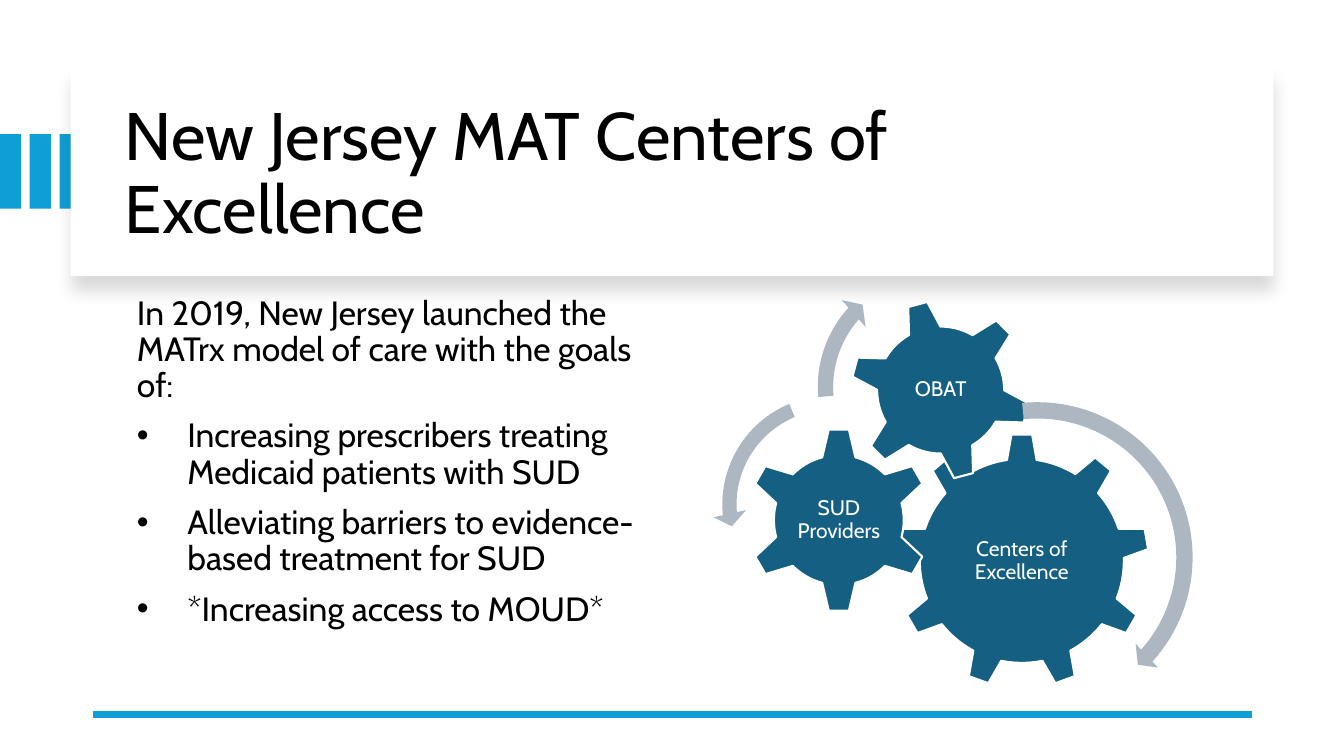
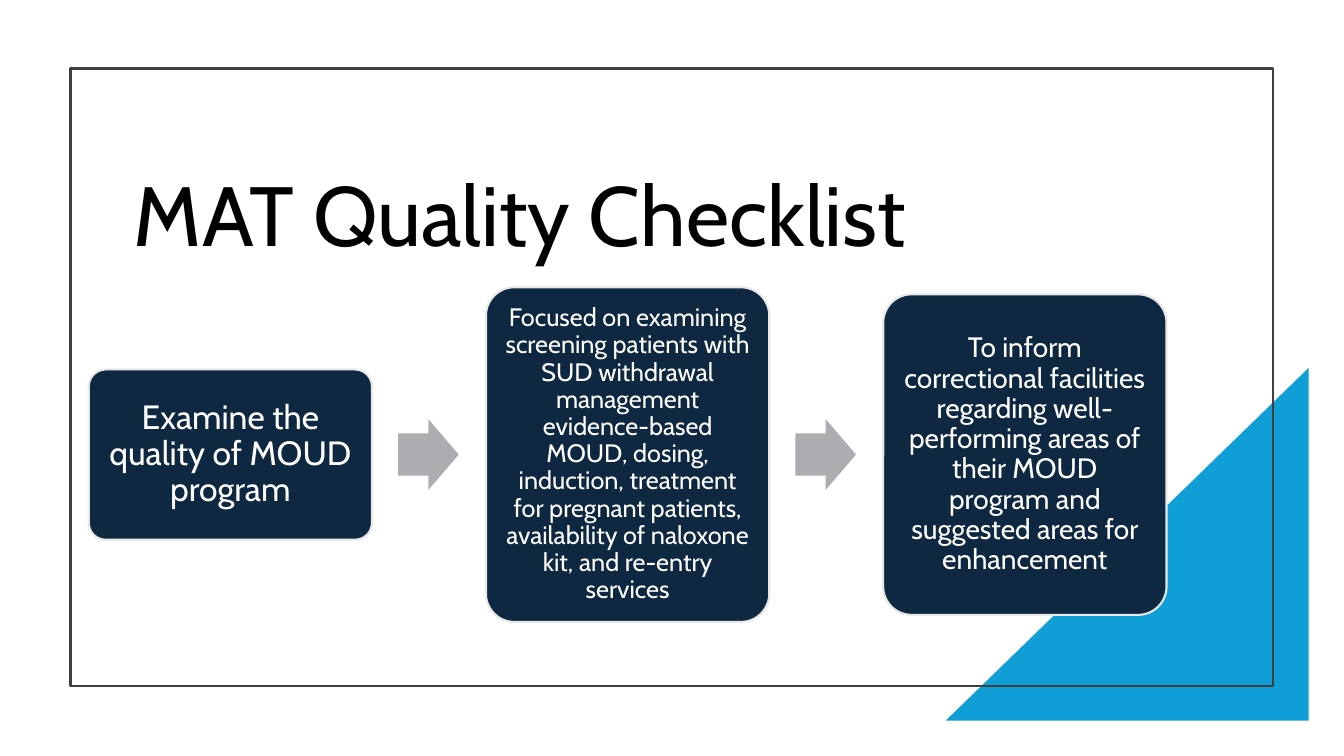
"""Build two slides on the New Jersey MAT programme: care model and checklist."""
from dataclasses import dataclass

from lxml.etree import SubElement
from pptx import Presentation
from pptx.dml.color import RGBColor
from pptx.enum.shapes import MSO_CONNECTOR, MSO_SHAPE
from pptx.enum.text import MSO_ANCHOR, PP_ALIGN
from pptx.oxml.ns import qn
from pptx.util import Inches, Pt

FONT = "Cabin"
COLORS = {
    "black": "000000",
    "white": "FFFFFF",
    "accent": "0F9ED5",
    "frame": "404040",
    "gear": "156082",
    "swirl": "ACB7C1",
    "step": "0E2841",
    "step_edge": "E8E8E8",
    "step_arrow": "ABADB0",
}


@dataclass(frozen=True)
class Box:
    left: float
    top: float
    width: float
    height: float

    def emu(self):
        return tuple(Inches(v) for v in (self.left, self.top, self.width, self.height))


@dataclass(frozen=True)
class Gear:
    kind: MSO_SHAPE
    box: Box
    label: str
    label_width: float
    rotation: float = 0


@dataclass(frozen=True)
class Swirl:
    kind: MSO_SHAPE
    box: Box
    adjustments: tuple


@dataclass(frozen=True)
class Step:
    text: str
    height: float
    size: int
    inset: float


GEARS = (
    Gear(MSO_SHAPE.GEAR_9, Box(8.87, 4.3, 2.53, 2.53), "Centers of Excellence", 1.51),
    Gear(MSO_SHAPE.GEAR_6, Box(7.4, 4.24, 1.84, 1.84), "SUD Providers", 0.91),
    Gear(MSO_SHAPE.GEAR_6, Box(8.43, 2.97, 1.8, 1.8), "OBAT", 1.01, 345),
)
SWIRLS = (
    Swirl(MSO_SHAPE.CIRCULAR_ARROW, Box(8.67, 3.91, 3.24, 3.24),
          (0.05, 2.99, 25.17, 158.6, 0.05)),
    Swirl(MSO_SHAPE.LEFT_CIRCULAR_ARROW, Box(7.07, 3.83, 2.35, 2.35),
          (0.06, 4.3, 104.89, 148.38, 0.07)),
    Swirl(MSO_SHAPE.CIRCULAR_ARROW, Box(8.01, 2.57, 2.54, 2.54),
          (0.06, 3.94, 133.14, 105.08, 0.07)),
)
INTRO = "In 2019, New Jersey launched the MATrx model of care with the goals of:"
GOALS = (
    "Increasing prescribers treating Medicaid patients with SUD",
    "Alleviating barriers to evidence-based treatment for SUD",
    "*Increasing access to MOUD*",
)
STEPS = (
    Step("Examine the quality of MOUD program", 1.69, 24, 0.1),
    Step("Focused on examining screening patients with SUD withdrawal management "
         "evidence-based MOUD, dosing, induction, treatment for pregnant patients, "
         "availability of naloxone kit, and re-entry services", 3.32, 18, 0.07),
    Step("To inform correctional facilities regarding well-performing areas of "
         "their MOUD program and suggested areas for enhancement", 3.18, 20, 0.08),
)


def rgb(name: str) -> RGBColor:
    """Look up a palette colour."""
    return RGBColor.from_string(COLORS[name])


def add_shape(slide, kind, box: Box, fill=None, line=None, width=1.5, adjustments=()):
    """Add a preset shape without shadow."""
    s = slide.shapes.add_shape(kind, *box.emu())
    s.shadow.inherit = False
    for i, value in enumerate(adjustments):
        s.adjustments[i] = value
    if fill:
        s.fill.solid()
        s.fill.fore_color.rgb = rgb(fill)
    else:
        s.fill.background()
    if line:
        s.line.color.rgb = rgb(line)
        s.line.width = Pt(width)
    else:
        s.line.fill.background()
    return s


def set_frame(s, inset=None):
    """Wrap and vertically centre the text of a shape."""
    tf = s.text_frame
    tf.word_wrap = True
    tf.vertical_anchor = MSO_ANCHOR.MIDDLE
    if inset is not None:
        tf.margin_left = tf.margin_right = Inches(inset)
        tf.margin_top = tf.margin_bottom = Inches(inset)
    return tf


def write(p, text: str, size: float, color: str, align=PP_ALIGN.LEFT) -> None:
    """Write one run into a paragraph."""
    p.alignment = align
    p.line_spacing = 0.9
    r = p.add_run()
    r.text = text
    r.font.name = FONT
    r.font.size = Pt(size)
    r.font.color.rgb = rgb(color)


def add_text(slide, box: Box, text: str, size: float, color="black",
             align=PP_ALIGN.LEFT, inset=None) -> None:
    """Add a text box holding one paragraph."""
    tf = set_frame(slide.shapes.add_textbox(*box.emu()), inset)
    write(tf.paragraphs[0], text, size, color, align)


def add_soft_shadow(s) -> None:
    """Give a shape a soft shadow below it."""
    effects = s.element.spPr.find(qn("a:effectLst"))
    shadow = SubElement(effects, qn("a:outerShdw"), blurRad=str(Pt(11)),
                        dist=str(Pt(10)), dir="5400000", algn="t", rotWithShape="0")
    color = SubElement(shadow, qn("a:srgbClr"), val=COLORS["black"])
    SubElement(color, qn("a:alpha"), val="15000")


def add_rule(slide, left: float, right: float, y: float) -> None:
    """Draw the accent rule at the foot of a slide."""
    s = slide.shapes.add_connector(MSO_CONNECTOR.STRAIGHT, Inches(left), Inches(y),
                                   Inches(right), Inches(y))
    s.line.color.rgb = rgb("accent")
    s.line.width = Pt(4.5)
    SubElement(s.element.spPr, qn("a:effectLst"))


def add_goals(slide, box: Box) -> None:
    """Add the introduction and its bulleted goals."""
    tf = set_frame(slide.shapes.add_textbox(*box.emu()))
    for i, text in enumerate((INTRO, *GOALS)):
        p = tf.add_paragraph() if i else tf.paragraphs[0]
        write(p, text, 24, "black")
        p.space_before = Pt(10)
        pPr = p._p.get_or_add_pPr()
        pPr.set("marL", str(Inches(0.62 if i else 0.12)))
        pPr.set("indent", str(Inches(-0.5 if i else 0)))
        if i:
            SubElement(pPr, qn("a:buFont"), typeface="Arial")
            SubElement(pPr, qn("a:buChar"), char="•")


def add_gear(slide, gear: Gear) -> None:
    """Add a gear with an upright label at its centre."""
    box = gear.box
    s = add_shape(slide, gear.kind, box, "gear", "white")
    s.rotation = gear.rotation
    width = gear.label_width
    label = Box(box.left + (box.width - width) / 2,
                box.top + (box.height - width) / 2, width, width)
    add_text(slide, label, gear.label, 15, "white", PP_ALIGN.CENTER, 0.02)


def build_centers(slide) -> None:
    """Build the slide on the centers of excellence."""
    for i in range(3):
        add_shape(slide, MSO_SHAPE.RECTANGLE, Box(i * 0.295, 1.33, 0.21, 0.74), "accent")
    card = add_shape(slide, MSO_SHAPE.RECTANGLE, Box(0.7, 0.67, 11.93, 2.07), "white")
    add_soft_shadow(card)
    add_text(slide, Box(1.14, 0.89, 10.87, 1.7), "New Jersey MAT Centers of Excellence", 48)
    add_goals(slide, Box(1.14, 2.96, 5.38, 3.25))
    add_rule(slide, 0.92, 12.42, 7.09)
    for gear in GEARS:
        add_gear(slide, gear)
    for swirl in SWIRLS:
        add_shape(slide, swirl.kind, swirl.box, "swirl", adjustments=swirl.adjustments)


def build_checklist(slide) -> None:
    """Build the slide on the quality checklist."""
    left, middle, width, pitch = 0.88, 4.51, 2.81, 3.94
    corner = add_shape(slide, MSO_SHAPE.RIGHT_TRIANGLE, Box(9.38, 3.65, 3.6, 3.5), "accent")
    corner.element.spPr.find(qn("a:xfrm")).set("flipH", "1")
    add_shape(slide, MSO_SHAPE.RECTANGLE, Box(0.7, 0.68, 11.93, 6.13), line="frame")
    add_text(slide, Box(1.23, 1.3, 10.92, 1.75), "MAT Quality Checklist", 60)
    for i, step in enumerate(STEPS):
        x = left + i * pitch
        if i:
            add_shape(slide, MSO_SHAPE.RIGHT_ARROW,
                      Box(x - pitch + width + 0.26, middle - 0.35, 0.6, 0.7),
                      "step_arrow", adjustments=(0.6, 0.5))
        s = add_shape(slide, MSO_SHAPE.ROUNDED_RECTANGLE,
                      Box(x, middle - step.height / 2, width, step.height),
                      "step", "step_edge", adjustments=(0.1,))
        tf = set_frame(s, step.inset)
        write(tf.paragraphs[0], step.text, step.size, "white", PP_ALIGN.CENTER)


def main() -> None:
    """Create and save the presentation."""
    prs = Presentation()
    prs.slide_width, prs.slide_height = Inches(13.33), Inches(7.5)
    for build in (build_centers, build_checklist):
        build(prs.slides.add_slide(prs.slide_layouts[6]))
    prs.save("out.pptx")


if __name__ == "__main__":
    main()
